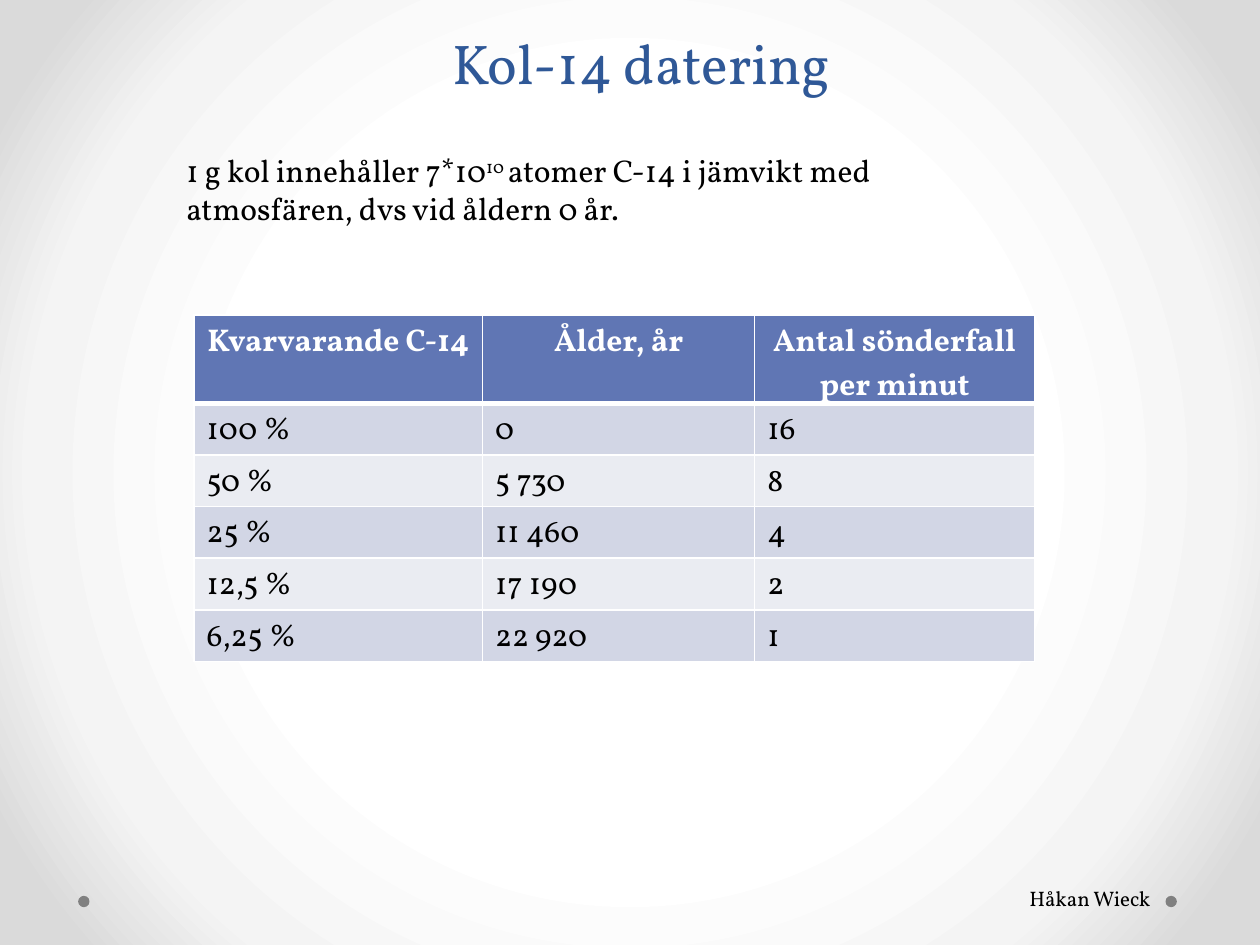
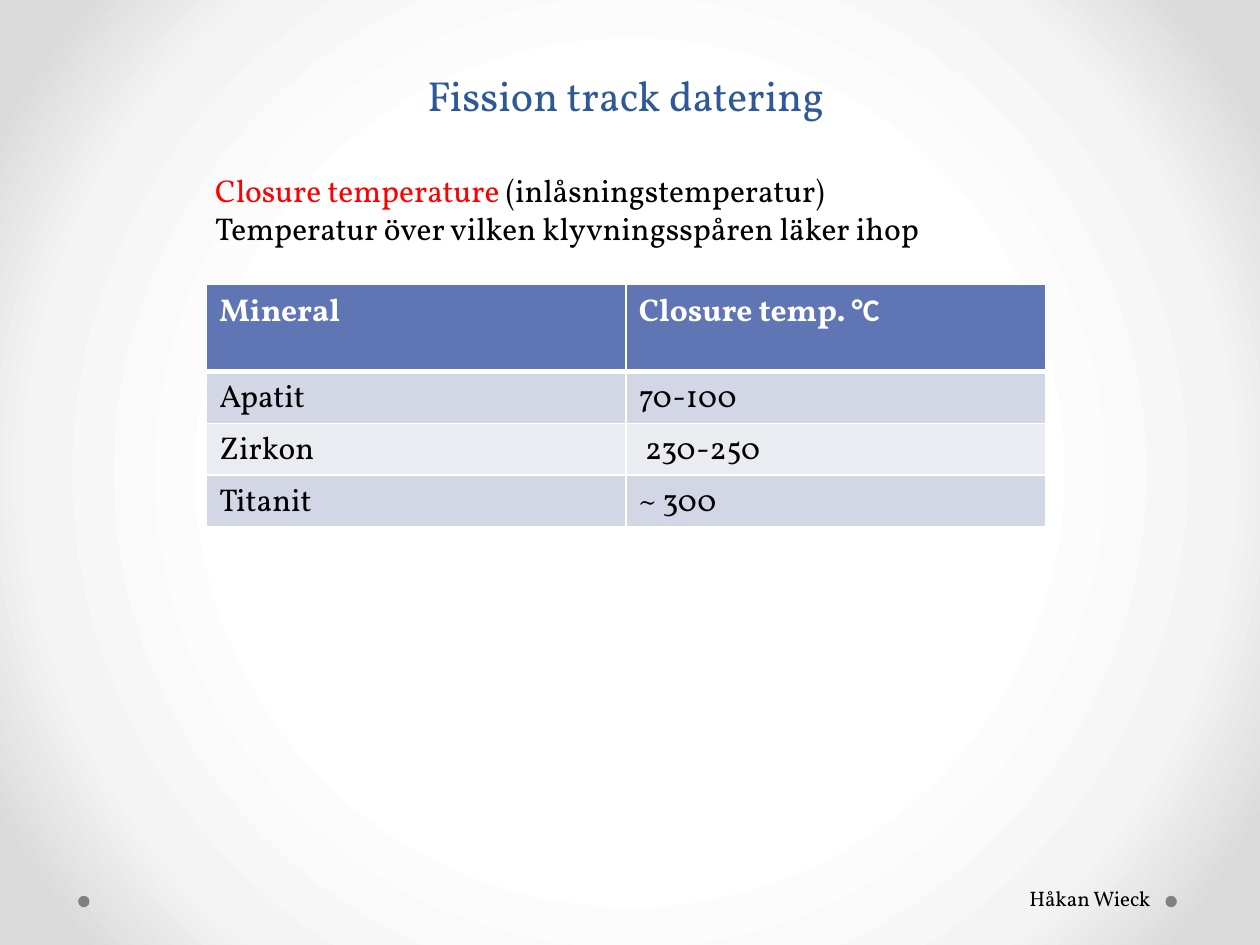
from pptx import Presentation
from pptx.dml.color import RGBColor
from pptx.enum.shapes import MSO_SHAPE
from pptx.enum.text import MSO_ANCHOR, PP_ALIGN
from pptx.oxml import parse_xml
from pptx.oxml.ns import nsdecls, qn
from pptx.util import Inches, Pt

COLORS = {
    "title": "2F5897", "text": "000000", "term": "FF0000", "white": "FFFFFF",
    "header": "6076B4", "odd": "D2D6E5", "even": "EAECF2", "dot": "808080",
}
BACKDROP = [(50, "FFFFFF"), (76, "F4F4F4"), (92, "DADADA")]
FONT = "Vollkorn"
AUTHOR = "Håkan Wieck"
DOT_LEFTS = (0.62, 9.25)
HEADER_HEIGHT, ROW_HEIGHT = 0.69, 0.41

# A paragraph is a list of spans: (text, style overrides)
SLIDES = [
    {
        "title": "Kol-14 datering", "title_size": 32, "title_at": (0.59, 0.13, 9, 0.68),
        "intro_at": (1.38, 1.15, 6.69, 0.71),
        "intro": [[("1 g kol innehåller 7*10", {}), ("10 ", {"raised": True}),
                   ("atomer C-14 i jämvikt med atmosfären, dvs vid åldern 0 år.", {})]],
        "table_at": (1.54, 2.5), "columns": (2.29, 2.16, 2.22),
        "header_align": PP_ALIGN.CENTER,
        "rows": [
            ("Kvarvarande C-14", "Ålder, år", "Antal sönderfall per minut"),
            ("100 %", "0", "16"),
            ("50 %", "5 730", "8"),
            ("25 %", "11 460", "4"),
            ("12,5 %", "17 190", "2"),
            ("6,25 %", "22 920", "1"),
        ],
    },
    {
        "title": "Fission track datering ", "title_size": 24, "title_at": (0.5, 0.29, 9, 0.71),
        "intro_at": (1.61, 1.31, 6.61, 0.71),
        "intro": [[("Closure temperature ", {"color": "term"}), ("(inlåsningstemperatur)", {})],
                  [("Temperatur över vilken klyvningsspåren läker ihop", {})]],
        "table_at": (1.64, 2.26), "columns": (3.33, 3.33),
        "header_align": PP_ALIGN.LEFT,
        "rows": [
            ("Mineral", [("Closure temp. ", {}), ("°C", {"font": "Calibri"})]),
            ("Apatit", "70-100"),
            ("Zirkon", " 230-250"),
            ("Titanit", "~ 300"),
        ],
    },
]


def rgb(name):
    return RGBColor.from_string(COLORS[name])


def write_spans(para, spans, size=18, color="text", bold=False, align=PP_ALIGN.LEFT):
    para.alignment = align
    for text, style in spans:
        span = para.add_run()
        span.text = text
        font = span.font
        font.name, font.size, font.bold = style.get("font", FONT), Pt(size), bold
        font.color.rgb = rgb(style.get("color", color))
        if style.get("raised"):
            font._element.set("baseline", "30000")


def add_text(slide, place, paragraphs, wrap=True, **style):
    box = slide.shapes.add_textbox(*map(Inches, place))
    frame = box.text_frame
    frame.word_wrap = wrap
    for index, spans in enumerate(paragraphs):
        para = frame.add_paragraph() if index else frame.paragraphs[0]
        write_spans(para, spans, **style)
    return frame


def set_borders(cell, top, bottom):
    """Draw white borders; they must come before the fill in the cell."""
    properties = cell._tc.get_or_add_tcPr()
    widths = {"lnL": 1, "lnR": 1, "lnT": top, "lnB": bottom}
    for index, (tag, width) in enumerate(widths.items()):
        properties.insert(index, parse_xml(
            f'<a:{tag} {nsdecls("a")} w="{Pt(width)}"><a:solidFill>'
            f'<a:srgbClr val="{COLORS["white"]}"/></a:solidFill></a:{tag}>'))


def add_data_table(slide, content):
    rows, columns = content["rows"], content["columns"]
    heights = [HEADER_HEIGHT] + [ROW_HEIGHT] * (len(rows) - 1)
    left, top = content["table_at"]
    table = slide.shapes.add_table(
        len(rows), len(columns), Inches(left), Inches(top),
        Inches(sum(columns)), Inches(sum(heights))).table
    for column, width in zip(table.columns, columns):
        column.width = Inches(width)
    for row_index, (values, height) in enumerate(zip(rows, heights)):
        table.rows[row_index].height = Inches(height)
        is_header = row_index == 0
        fill = "header" if is_header else ("even", "odd")[row_index % 2]
        for column_index, value in enumerate(values):
            cell = table.cell(row_index, column_index)
            cell.fill.solid()
            cell.fill.fore_color.rgb = rgb(fill)
            set_borders(cell, 3 if row_index == 1 else 1, 3 if is_header else 1)
            spans = [(value, {})] if isinstance(value, str) else value
            write_spans(cell.text_frame.paragraphs[0], spans,
                        color="white" if is_header else "text", bold=is_header,
                        align=content["header_align"] if is_header else PP_ALIGN.LEFT)


def set_backdrop(master):
    """Give every slide the radial gradient through the master."""
    master.background.fill.solid()
    properties = master.element.find(".//" + qn("p:bgPr"))
    stops = "".join(f'<a:gs pos="{position * 1000}"><a:srgbClr val="{color}"/></a:gs>'
                    for position, color in BACKDROP)
    properties.replace(properties[0], parse_xml(
        f'<a:gradFill {nsdecls("a")} rotWithShape="1"><a:gsLst>{stops}</a:gsLst>'
        '<a:path path="circle"><a:fillToRect l="50000" t="50000" r="50000" b="50000"/>'
        '</a:path></a:gradFill>'))


def add_frame(slide, content):
    """Add what the slides share: dots, title and author."""
    for left in DOT_LEFTS:
        dot = slide.shapes.add_shape(MSO_SHAPE.OVAL, Inches(left), Inches(7.11),
                                     Inches(0.09), Inches(0.09))
        dot.shadow.inherit = False
        dot.fill.solid()
        dot.fill.fore_color.rgb = rgb("dot")
        dot.line.fill.background()
    title = add_text(slide, content["title_at"], [[(content["title"], {})]],
                     size=content["title_size"], color="title", align=PP_ALIGN.CENTER)
    title.vertical_anchor = MSO_ANCHOR.BOTTOM
    title.paragraphs[0].line_spacing = Pt(58)
    add_text(slide, (8.02, 6.98, 1.21, 0.3), [[(AUTHOR, {})]], wrap=False,
             size=12, align=PP_ALIGN.RIGHT)


def main():
    deck = Presentation()
    deck.slide_width, deck.slide_height = Inches(10), Inches(7.5)
    set_backdrop(deck.slide_master)
    for content in SLIDES:
        slide = deck.slides.add_slide(deck.slide_layouts[6])
        add_frame(slide, content)
        add_text(slide, content["intro_at"], content["intro"])
        add_data_table(slide, content)
    deck.save("out.pptx")


if __name__ == "__main__":
    main()
